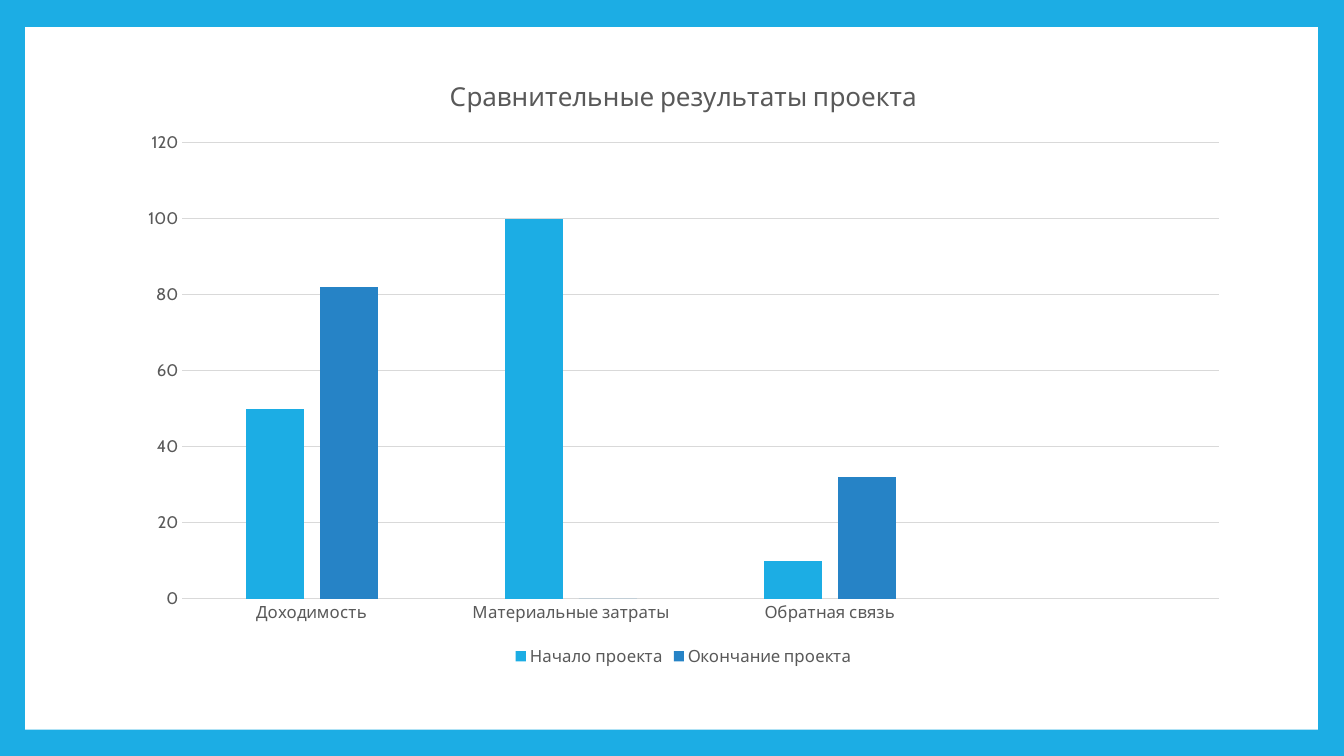
from pptx import Presentation
from pptx.chart.data import CategoryChartData
from pptx.dml.color import RGBColor
from pptx.enum.chart import XL_CHART_TYPE, XL_LEGEND_POSITION, XL_TICK_MARK
from pptx.enum.shapes import MSO_SHAPE
from pptx.util import Inches, Pt

COLUMNS = XL_CHART_TYPE.COLUMN_CLUSTERED
BOTTOM = XL_LEGEND_POSITION.BOTTOM
NO_TICK = XL_TICK_MARK.NONE
RECT = MSO_SHAPE.RECTANGLE

# Content
TITLE = "Сравнительные результаты проекта"
CATEGORIES = ["Доходимость", "Материальные затраты", "Обратная связь", ""]
SERIES = [
    ("Начало проекта", [50, 100, 10, None], "1CADE4"),
    ("Окончание проекта", [82, 0, 32, None], "2683C6"),
]

THEME = {
    "font": "Cabin",
    "frame": "1CADE4",
    "panel": "FFFFFF",
    "text": "595959",
    "grid": "D9D9D9",
    "title_size": 18.6,
    "label_size": 12,
    "line": 0.75,
}

# Layout
SLIDE = (13.33, 7.5)
PANEL = (0.25, 0.27, 12.82, 6.97)
CHART = (1.25, 0.55, 11.06, 6.1)


def rgb(name):
    return RGBColor.from_string(THEME.get(name, name))


def set_font(font, size=THEME["label_size"], color="text", bold=False):
    font.name = THEME["font"]
    font.size = Pt(size)
    font.bold = bold
    font.color.rgb = rgb(color)


def add_text(tf, text, **fmt):
    p = tf.paragraphs[0]
    r = p.add_run()
    r.text = text
    set_font(r.font, **fmt)


def set_line(line, color="grid"):
    line.color.rgb = rgb(color)
    line.width = Pt(THEME["line"])


def add_panel(s):
    sp = s.shapes.add_shape(RECT, *map(Inches, PANEL))
    sp.shadow.inherit = False
    sp.fill.solid()
    sp.fill.fore_color.rgb = rgb("panel")
    sp.line.fill.background()


def add_results_chart(s):
    data = CategoryChartData()
    data.categories = CATEGORIES
    for name, values, _ in SERIES:
        data.add_series(name, values)
    chart = s.shapes.add_chart(COLUMNS, *map(Inches, CHART), data).chart
    set_font(chart.font)

    # Title and legend
    chart.has_title = True
    add_text(chart.chart_title.text_frame, TITLE, size=THEME["title_size"])
    chart.chart_title.include_in_layout = False
    chart.has_legend = True
    chart.legend.position = BOTTOM
    chart.legend.include_in_layout = False
    set_font(chart.legend.font)

    # Axes
    for axis in (chart.category_axis, chart.value_axis):
        axis.major_tick_mark = axis.minor_tick_mark = NO_TICK
        set_font(axis.tick_labels.font)
    set_line(chart.category_axis.format.line)
    chart.value_axis.format.line.fill.background()
    chart.value_axis.has_major_gridlines = True
    set_line(chart.value_axis.major_gridlines.format.line)

    # Columns
    plot = chart.plots[0]
    plot.vary_by_categories = False
    plot.gap_width = 219
    plot.overlap = -27
    for series, (_, _, color) in zip(plot.series, SERIES):
        series.invert_if_negative = False
        series.format.fill.solid()
        series.format.fill.fore_color.rgb = rgb(color)


def main():
    prs = Presentation()
    prs.slide_width, prs.slide_height = map(Inches, SLIDE)
    s = prs.slides.add_slide(prs.slide_layouts[6])
    s.background.fill.solid()
    s.background.fill.fore_color.rgb = rgb("frame")
    add_panel(s)
    add_results_chart(s)
    prs.save("out.pptx")


if __name__ == "__main__":
    main()
